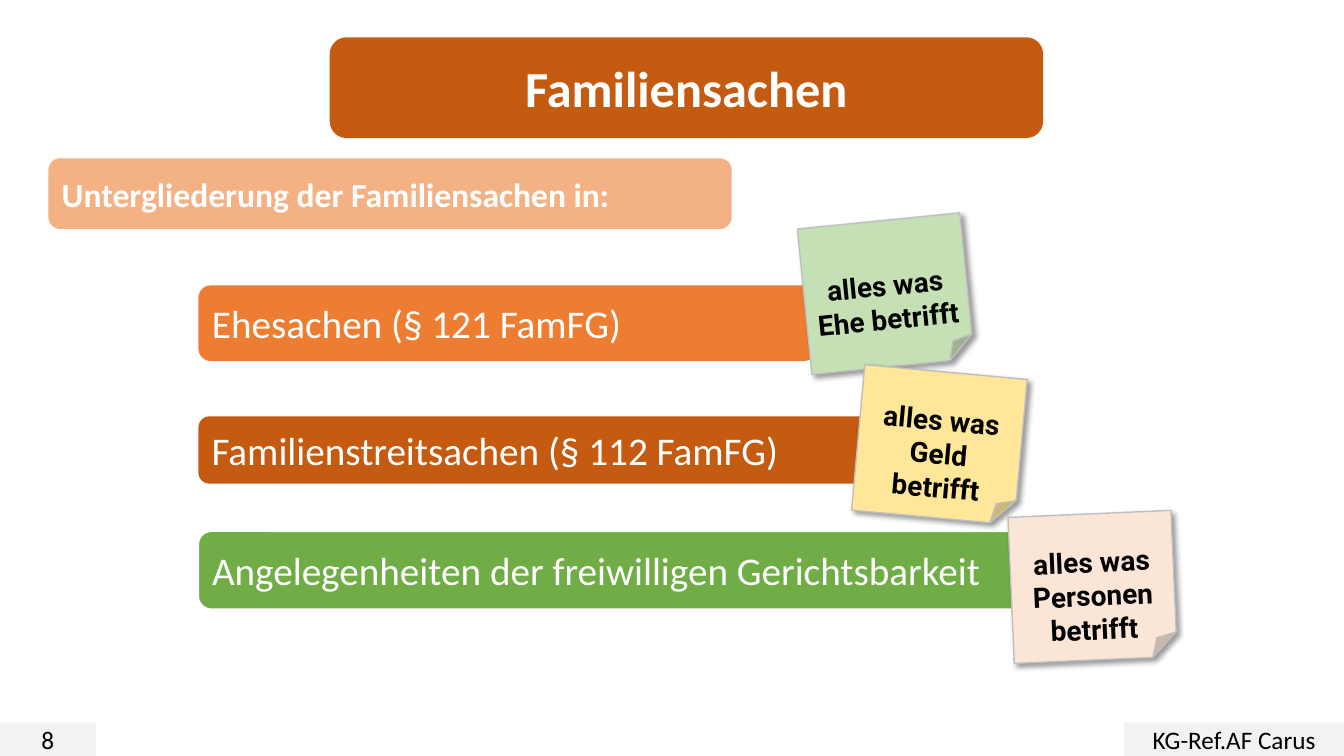
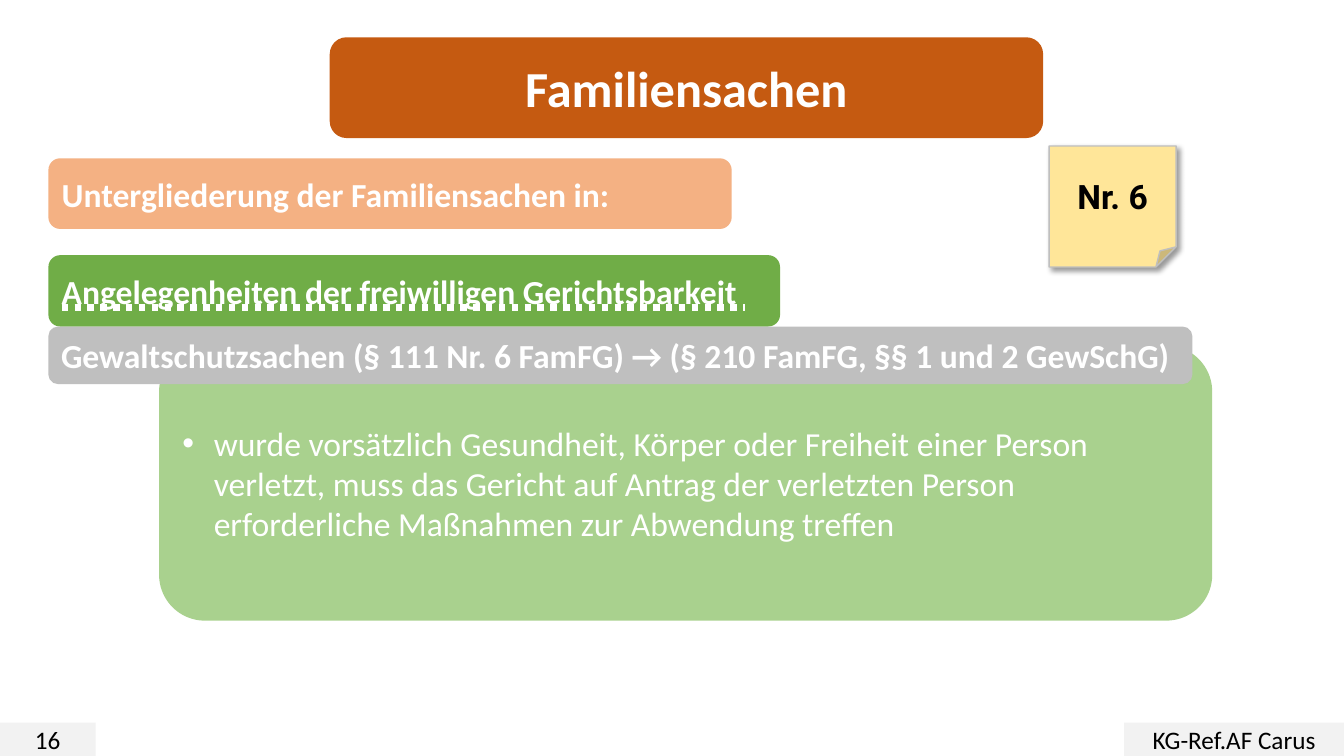
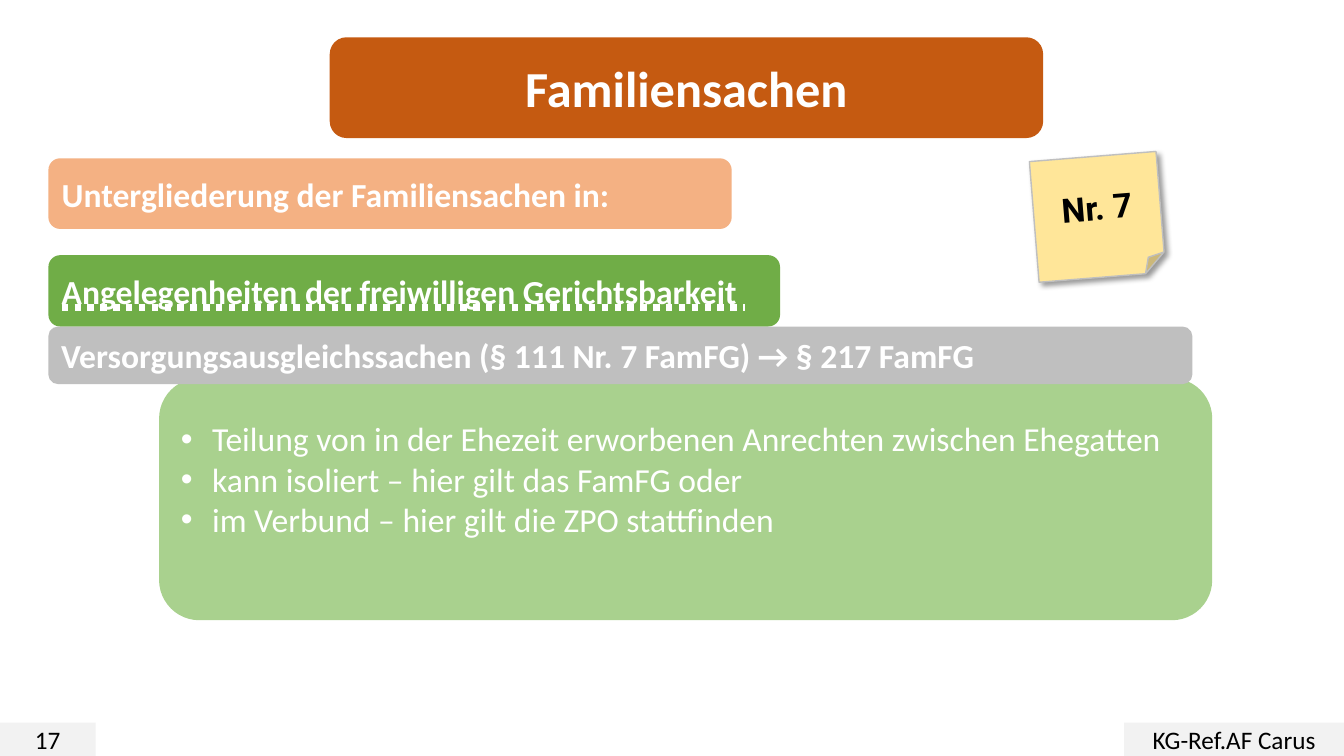
from lxml import etree
from pptx import Presentation
from pptx.dml.color import RGBColor
from pptx.enum.shapes import MSO_SHAPE
from pptx.enum.text import MSO_ANCHOR, MSO_AUTO_SIZE, MSO_UNDERLINE, PP_ALIGN
from pptx.oxml.ns import qn
from pptx.util import Cm, Pt

ROUND, RECT, FOLDED = (MSO_SHAPE.ROUNDED_RECTANGLE, MSO_SHAPE.RECTANGLE,
                       MSO_SHAPE.FOLDED_CORNER)
LEFT, CENTER = PP_ALIGN.LEFT, PP_ALIGN.CENTER
MIDDLE = MSO_ANCHOR.MIDDLE
NO_AUTOFIT = MSO_AUTO_SIZE.NONE
DOTTED = MSO_UNDERLINE.DOTTED_HEAVY_LINE

WHITE = RGBColor(0xFF, 0xFF, 0xFF)
BLACK = RGBColor(0, 0, 0)
RUST = RGBColor(0xC5, 0x5A, 0x11)
ORANGE = RGBColor(0xED, 0x7D, 0x31)
PEACH = RGBColor(0xF4, 0xB1, 0x83)
GREEN = RGBColor(0x70, 0xAD, 0x47)
LIGHT_GREEN = RGBColor(0xA9, 0xD1, 0x8E)
GRAY = RGBColor(0xBF, 0xBF, 0xBF)
PALE_GRAY = RGBColor(0xF2, 0xF2, 0xF2)
NOTE_GREEN = RGBColor(0xC5, 0xE0, 0xB4)
NOTE_YELLOW = RGBColor(0xFF, 0xE6, 0x99)
NOTE_PINK = RGBColor(0xFB, 0xE5, 0xD6)

BODY_FONT, NOTE_FONT = "Calibri", "Roboto"
WIDTH, HEIGHT = 33.87, 19.05
MARGIN = 1.22
FOOTER_H = 0.84
TITLE_BOX = (8.31, 0.94, 17.98, 2.54)
BIG_NOTE, SMALL_NOTE = (4.11, 3.68), (3.2, 3.05)
INDENT = 0.79
LINE_GAP = 1.02
INSET = 0.13


class Deck:
    """Holds the style and the current slide."""

    def __init__(self):
        self.prs = Presentation()
        self.prs.slide_width, self.prs.slide_height = Cm(WIDTH), Cm(HEIGHT)
        self.s = None

    def add_text(self, sp, lines, size, color=WHITE, font=BODY_FONT,
                 bold=False, align=LEFT, underline=None):
        tf = sp.text_frame
        tf.word_wrap = True
        tf.auto_size = NO_AUTOFIT
        tf.vertical_anchor = MIDDLE
        for i, line in enumerate(lines):
            p = tf.add_paragraph() if i else tf.paragraphs[0]
            p.alignment = align
            r = p.add_run()
            r.text = line
            r.font.name, r.font.size, r.font.bold = font, Pt(size), bold
            r.font.color.rgb = color
            if underline:
                r.font.underline = underline

    def box(self, at, fill, lines=(), size=24, kind=ROUND, line=None, **style):
        sp = self.s.shapes.add_shape(kind, *map(Cm, at))
        sp.shadow.inherit = False
        sp.fill.solid()
        sp.fill.fore_color.rgb = fill
        if line is None:
            sp.line.fill.background()
        else:
            sp.line.color.rgb = line
            sp.line.width = Pt(1)
        self.add_text(sp, lines, size, **style)
        return sp

    def title(self, text):
        self.box(TITLE_BOX, RUST)
        sp = self.s.shapes.title
        sp.left, sp.top, sp.width, sp.height = map(Cm, TITLE_BOX)
        self.add_text(sp, [text], 36, bold=True, align=CENTER)
        self.s.shapes.element.append(sp.element)

    def footer(self, left, width, text):
        self.box((left, HEIGHT - FOOTER_H, width, FOOTER_H), PALE_GRAY, [text],
                 18, RECT, color=BLACK, align=CENTER)

    def slide(self, number):
        self.s = self.prs.slides.add_slide(self.prs.slide_layouts[5])
        self.title("Familiensachen")
        self.box((MARGIN, 3.99, 17.22, 1.78), PEACH,
                 ["Untergliederung der Familiensachen in:"], bold=True)
        self.footer(0, 2.41, str(number))
        self.footer(28.33, 5.54, "KG-Ref.AF Carus")

    def note(self, left, top, lines, fill=NOTE_YELLOW, extent=SMALL_NOTE,
             angle=0, size=24, gap=0):
        sp = self.box((left, top, *extent), fill, lines, size, FOLDED, GRAY,
                      color=BLACK, font=NOTE_FONT, bold=True, align=CENTER)
        sp.rotation = angle
        sp.text_frame.margin_top = Cm(INSET + gap)
        effects = sp.element.spPr.find(qn("a:effectLst"))
        shadow = etree.SubElement(
            effects, qn("a:outerShdw"), blurRad=str(Pt(4)), dist=str(Pt(3)),
            dir="2700000", algn="tl", rotWithShape="0")
        color = etree.SubElement(shadow, qn("a:srgbClr"), val=str(BLACK))
        etree.SubElement(color, qn("a:alpha"), val="40000")

    def bullets(self, at, lines, gap=0):
        sp = self.box(at, LIGHT_GREEN, lines)
        sp.text_frame.margin_bottom = Cm(INSET + gap)
        for p in sp.text_frame.paragraphs:
            pPr = p._p.get_or_add_pPr()
            pPr.set("marL", str(Cm(INDENT)))
            pPr.set("indent", str(-Cm(INDENT)))
            etree.SubElement(pPr, qn("a:buFont"), typeface="Arial")
            etree.SubElement(pPr, qn("a:buChar"), char="•")

    def matter(self, number, heading, lines, top, height, note, gap=0):
        self.slide(number)
        self.note(**note)
        self.box((MARGIN, 6.43, 18.44, 1.8), GREEN,
                 ["Angelegenheiten der freiwilligen Gerichtsbarkeit "],
                 bold=True, underline=DOTTED)
        self.bullets((4.01, top, 26.54, height), lines, gap)
        self.box((MARGIN, 8.23, 28.83, 1.45), GRAY, [heading], bold=True)


def main():
    deck = Deck()

    deck.slide(8)
    for top, width, height, fill, line, text in (
            (13.39, 22.71, 1.96, GREEN, WHITE,
             "Angelegenheiten der freiwilligen Gerichtsbarkeit"),
            (7.19, 15.57, 1.91, ORANGE, None, "Ehesachen (§ 121 FamFG)"),
            (10.49, 17.15, 1.7, RUST, None,
             "Familienstreitsachen (§ 112 FamFG)")):
        deck.box((5, top, width, height), fill, [text], 28, line=line)
    for left, top, angle, fill, lines in (
            (20.27, 5.56, 354.3, NOTE_GREEN, ["alles was Ehe betrifft"]),
            (21.62, 9.37, 5.2, NOTE_YELLOW, ["alles was Geld", "betrifft"]),
            (25.48, 12.95, 357.5, NOTE_PINK,
             ["alles was Personen", "betrifft"])):
        deck.note(left, top, lines, fill, BIG_NOTE, angle, 20, LINE_GAP)

    deck.matter(
        16,
        "Gewaltschutzsachen (§ 111 Nr. 6 FamFG) → "
        "(§ 210 FamFG, §§ 1 und 2 GewSchG)",
        ["wurde vorsätzlich Gesundheit, Körper oder Freiheit einer Person "
         "verletzt, muss das Gericht auf Antrag der verletzten Person "
         "erforderliche Maßnahmen zur Abwendung treffen"],
        8.71, 6.93, dict(left=26.44, top=3.68, lines=["Nr. 6"]))

    deck.matter(
        17,
        "Versorgungsausgleichssachen (§ 111 Nr. 7 FamFG) → § 217 FamFG",
        ["Teilung von in der Ehezeit erworbenen Anrechten zwischen Ehegatten",
         "kann isoliert – hier gilt das FamFG oder",
         "im Verbund – hier gilt die ZPO stattfinden"],
        9.53, 6.1, dict(left=26.06, top=3.94, lines=["Nr. 7"], angle=355.4),
        LINE_GAP)

    deck.prs.save("out.pptx")


if __name__ == "__main__":
    main()
